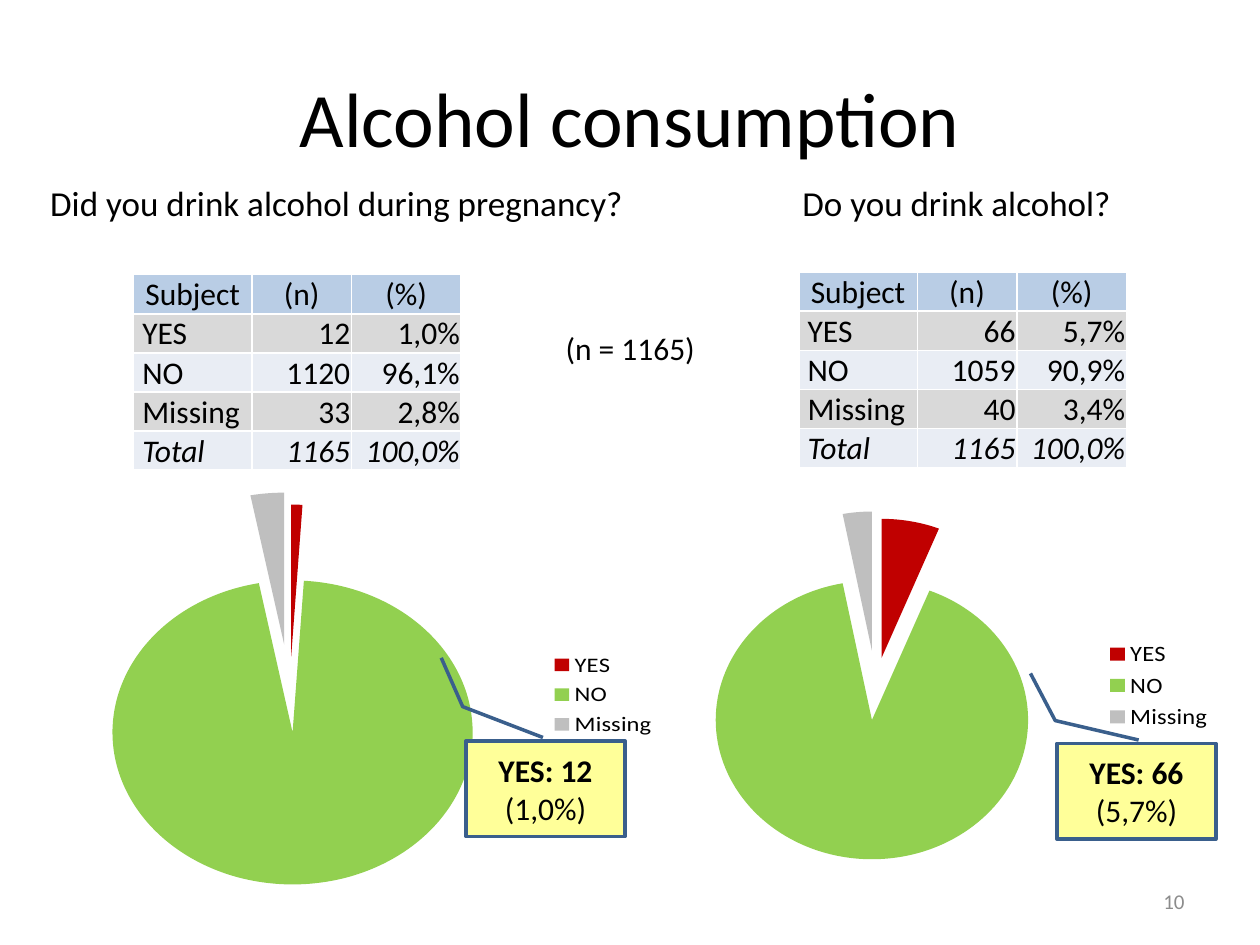
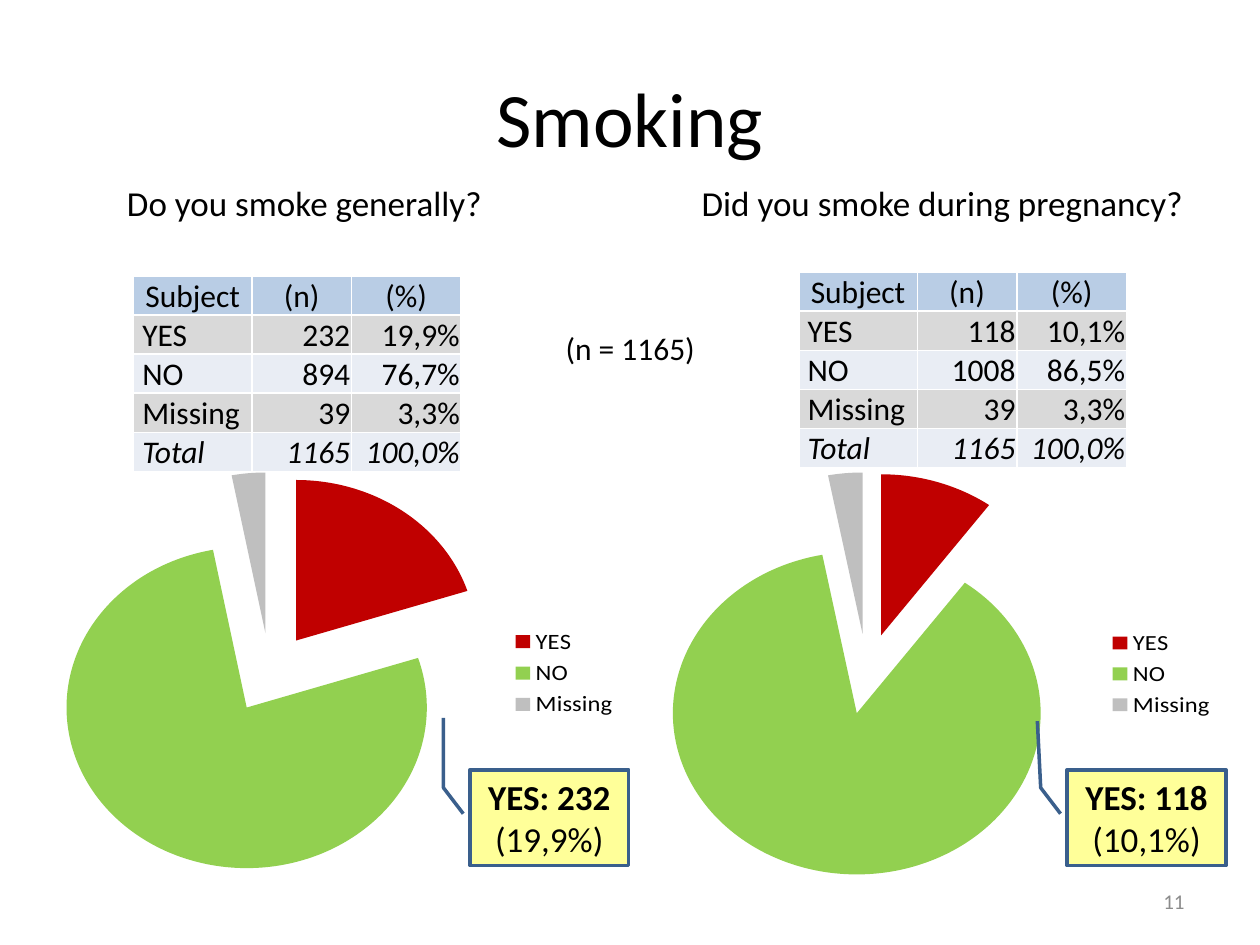
from dataclasses import dataclass

from lxml import etree
from pptx import Presentation
from pptx.chart.data import CategoryChartData
from pptx.dml.color import RGBColor
from pptx.enum.chart import XL_CHART_TYPE, XL_LEGEND_POSITION
from pptx.enum.shapes import MSO_SHAPE
from pptx.enum.text import MSO_ANCHOR, PP_ALIGN
from pptx.oxml.ns import qn
from pptx.util import Inches, Pt

PIE = XL_CHART_TYPE.PIE
LEGEND_RIGHT = XL_LEGEND_POSITION.RIGHT
CALLOUT = MSO_SHAPE.LINE_CALLOUT_2
MIDDLE, BOTTOM = MSO_ANCHOR.MIDDLE, MSO_ANCHOR.BOTTOM
LEFT, CENTER, RIGHT = PP_ALIGN.LEFT, PP_ALIGN.CENTER, PP_ALIGN.RIGHT


@dataclass(frozen=True)
class Theme:
    font: str = "Calibri"
    text: str = "000000"
    muted: str = "8C8C8C"
    header: str = "B9CDE5"
    bands: tuple = ("D9D9D9", "E9EDF4")
    answers: tuple = ("C00000", "92D050", "BFBFBF")
    callout: str = "FFFF99"
    outline: str = "3A5F8C"
    title_size: int = 44
    question_size: int = 20
    body_size: int = 18
    legend_size: int = 14
    number_size: int = 12


THEME = Theme()

# Slide grid: 100 columns by 75 rows
prs = Presentation()
prs.slide_width, prs.slide_height = Inches(10), Inches(7.5)
COL, ROW = prs.slide_width / 100, prs.slide_height / 75


def grid(left, top, width, height):
    return [round(n * unit) for n, unit in zip((left, top, width, height), (COL, ROW) * 2)]


def write(frame, text, size, align=LEFT, color=THEME.text, **look):
    """Add a run to the first paragraph of a frame and format it."""
    paragraph = frame.paragraphs[0]
    paragraph.alignment = align
    run = paragraph.add_run()
    run.text = text
    run.font.color.rgb = RGBColor.from_string(color)
    for name, value in dict(name=THEME.font, size=Pt(size), bold=False, **look).items():
        setattr(run.font, name, value)


ANSWERS = ("YES", "NO", "Missing")
TOTAL = "1165"
TABLE_COLUMNS = (9.4, 7.9, 8.7)
TABLE_ROW = 3.1

# Per question: "pie" is the chart's place, "centre" and "side" its plot area,
# "bend" the callout line in shares of the callout box (y, x pairs)
SLIDES = [
    dict(title="Alcohol consumption", number="10", callout_size=THEME.body_size, questions=[
        dict(text="Did you drink alcohol during pregnancy?", at=(3, 13.9, 47.8, 4.4),
             table=(10.6, 21.8), counts=("12", "1120", "33"), shares=("1,0%", "96,1%", "2,8%"),
             pie=(2.8, 39.1, 50.4, 31.1), centre=20.2, side=28.6,
             values=(1, 96, 3), explode=(25, 25, 33), callout=(37, 58.8),
             bend=(-0.035, 0.484, -0.357, -0.022, -0.867, -0.157)),
        dict(text="Do you drink alcohol?", at=(62.7, 13.9, 26.7, 4.4),
             table=(63.4, 21.6), counts=("66", "1059", "40"), shares=("5,7%", "90,9%", "3,4%"),
             pie=(51.6, 40.6, 45.7, 27.6), centre=17.9, side=24.8,
             values=(6, 91, 3), explode=(20, 25, 25), callout=(83.9, 59),
             bend=(-0.035, 0.514, -0.238, -0.012, -0.731, -0.168)),
    ]),
    dict(title="Smoking", number="11", callout_size=THEME.question_size, questions=[
        dict(text="Do you smoke generally?", at=(9.1, 13.9, 30.4, 4.4),
             table=(10.6, 21.9), counts=("232", "894", "39"), shares=("19,9%", "76,7%", "3,3%"),
             pie=(2.4, 37.5, 47.7, 31.4), centre=19, side=28.6,
             values=(20, 77, 3), explode=(25, 25, 25), callout=(37.3, 61.1),
             bend=(0.459, -0.042, 0.188, -0.167, -0.543, -0.168)),
        dict(text="Did you smoke during pregnancy?", at=(54.7, 13.9, 41.1, 4.4),
             table=(63.4, 21.6), counts=("118", "1008", "39"), shares=("10,1%", "86,5%", "3,3%"),
             pie=(50, 37.5, 47.5, 31.9), centre=18.8, side=29.2,
             values=(10, 87, 3), explode=(25, 25, 25), callout=(84.7, 61.1),
             bend=(0.459, -0.042, 0.188, -0.167, -0.509, -0.188)),
    ]),
]

for topic in SLIDES:
    slide = prs.slides.add_slide(prs.slide_layouts[5])
    shapes = slide.shapes

    # Title
    title = shapes.title
    title.left, title.top, title.width, title.height = grid(5, 3, 90, 12.5)
    title.text_frame.vertical_anchor = MIDDLE
    write(title.text_frame, topic["title"], THEME.title_size, CENTER)

    # Sample size and slide number
    sample = shapes.add_textbox(*grid(43.9, 25.6, 12.4, 4)).text_frame
    sample.word_wrap = False
    write(sample, "(n = 1165)", THEME.body_size)
    number = shapes.add_textbox(*grid(71.7, 69.5, 23.3, 4)).text_frame
    number.word_wrap, number.vertical_anchor = True, MIDDLE
    write(number, topic["number"], THEME.number_size, RIGHT, THEME.muted)

    for question in topic["questions"]:
        # Question
        heading = shapes.add_textbox(*grid(*question["at"])).text_frame
        heading.word_wrap = False
        write(heading, question["text"], THEME.question_size)

        # Table of answers
        rows = [("Subject", "(n)", "(%)"),
                *zip(ANSWERS, question["counts"], question["shares"]),
                ("Total", TOTAL, "100,0%")]
        place = grid(*question["table"], sum(TABLE_COLUMNS), TABLE_ROW * len(rows))
        table = shapes.add_table(len(rows), len(TABLE_COLUMNS), *place).table
        for column, width in zip(table.columns, TABLE_COLUMNS):
            column.width = round(width * COL)
        for r, row in enumerate(rows):
            for c, text in enumerate(row):
                cell = table.cell(r, c)
                cell.fill.solid()
                fill = THEME.bands[(r - 1) % 2] if r else THEME.header
                cell.fill.fore_color.rgb = RGBColor.from_string(fill)
                indent = 0.07 if r and c == 0 else 0.01
                for name, value in dict(margin_left=Inches(indent), margin_right=Inches(0.01),
                                        margin_top=Inches(0.01), margin_bottom=0,
                                        vertical_anchor=BOTTOM).items():
                    setattr(cell, name, value)
                align = CENTER if r == 0 else RIGHT if c else LEFT
                write(cell.text_frame, text, THEME.body_size, align, italic=r == len(rows) - 1)

        # Pie of answers
        data = CategoryChartData()
        data.categories = ANSWERS
        data.add_series("Series 1", question["values"])
        chart = shapes.add_chart(PIE, *grid(*question["pie"]), data).chart
        chart.has_title = False
        chart.font.name, chart.font.size = THEME.font, Pt(10)
        chart.font.color.rgb = RGBColor.from_string(THEME.text)
        chart.has_legend = True
        chart.legend.position = LEGEND_RIGHT
        chart.legend.include_in_layout = False
        chart.legend.font.size = Pt(THEME.legend_size)
        plot = chart.plots[0]
        plot.vary_by_categories = True
        for i, (color, distance) in enumerate(zip(THEME.answers, question["explode"])):
            point = plot.series[0].points[i]
            point.format.fill.solid()
            point.format.fill.fore_color.rgb = RGBColor.from_string(color)
            explosion = etree.Element(qn("c:explosion"), val=str(distance))
            slice_xml = plot.series[0]._element.findall(qn("c:dPt"))[i]
            slice_xml.find(qn("c:spPr")).addprevious(explosion)

        # Square plot area, centred vertically in the chart
        width, height = question["pie"][2:]
        side = question["side"]
        plot_area = chart._chartSpace.chart.plotArea
        for old in plot_area.findall(qn("c:layout")):
            plot_area.remove(old)
        layout = etree.Element(qn("c:layout"))
        plot_area.insert(0, layout)
        manual = etree.SubElement(layout, qn("c:manualLayout"))
        for tag, value in dict(layoutTarget="inner", xMode="edge", yMode="edge",
                               x=(question["centre"] - side / 2) / width,
                               y=(1 - side / height) / 2,
                               w=side / width, h=side / height).items():
            etree.SubElement(manual, qn(f"c:{tag}"), val=str(value))

        # Callout for the YES answers
        callout = shapes.add_shape(CALLOUT, *grid(*question["callout"], 12.6, 7.6))
        callout.shadow.inherit = False
        for i, share in enumerate(question["bend"]):
            callout.adjustments[i] = share
        callout.fill.solid()
        callout.fill.fore_color.rgb = RGBColor.from_string(THEME.callout)
        callout.line.color.rgb = RGBColor.from_string(THEME.outline)
        callout.line.width = Pt(2)
        note = callout.text_frame
        note.word_wrap, note.vertical_anchor = True, MIDDLE
        write(note, f"YES: {question['counts'][0]}", topic["callout_size"], CENTER)
        note.paragraphs[0].runs[0].font.bold = True
        write(note, f" ({question['shares'][0]})", topic["callout_size"], CENTER)

prs.save("out.pptx")
